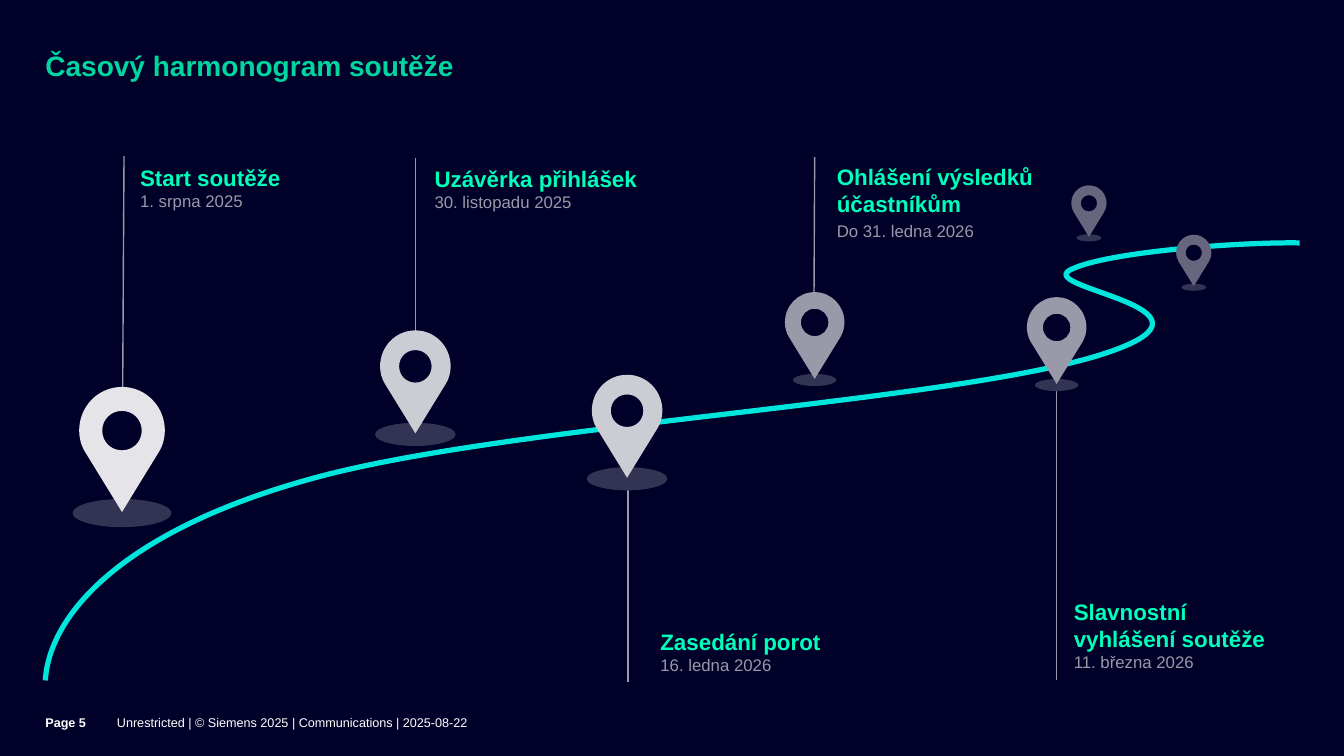
from dataclasses import dataclass

from lxml.etree import Element, SubElement
from pptx import Presentation
from pptx.dml.color import RGBColor
from pptx.enum.shapes import MSO_CONNECTOR, MSO_SHAPE
from pptx.enum.text import MSO_ANCHOR, MSO_AUTO_SIZE
from pptx.oxml.ns import qn
from pptx.util import Emu, Pt

SCALE = 9144
Point = tuple[float, float]
Box = tuple[int, int, int, int]


@dataclass(frozen=True)
class Theme:
    font: str = "Arial"
    back: str = "000028"
    title: str = "00D7A0"
    head: str = "00FFB9"
    road: str = "00E6DC"
    grey: str = "9999A9"
    shade: str = "333353"
    white: str = "FFFFFF"
    big: float = 20
    mid: float = 16
    small: float = 12
    foot: float = 9
    thick: float = 3.75
    thin: float = 1


@dataclass(frozen=True)
class Pin:
    x: int
    tip: int
    width: int
    color: str
    shade: tuple[int, int]


@dataclass(frozen=True)
class Event:
    name: str
    date: str
    box: Box
    line: Box
    low: bool = False
    gap: int = 0


@dataclass(frozen=True)
class Run:
    text: str
    size: float
    color: str
    bold: bool = False
    gap: float = 0
    lead: float = 1


THEME = Theme()

EVENTS = [
    Event("Start soutěže", "1. srpna 2025", (123, 155, 295, 63), (123, 155, 121, 508)),
    Event("Uzávěrka přihlášek", "30. listopadu 2025", (415, 156, 256, 63),
          (412, 157, 412, 411)),
    Event("Ohlášení výsledků účastníkům", "Do 31. ledna 2026", (814, 154, 260, 94),
          (808, 156, 807, 374), gap=3),
    Event("Zasedání porot", "16. ledna 2026", (639, 615, 256, 63),
          (623, 456, 623, 677), low=True),
    Event("Slavnostní vyhlášení soutěže", "11. března 2026", (1049, 585, 240, 90),
          (1048, 381, 1048, 675), low=True),
]

PINS = [
    Pin(121, 508, 85, "E5E5E9", (98, 28)),
    Pin(412, 430, 70, "CCCCD4", (80, 23)),
    Pin(622, 474, 70, "CCCCD4", (80, 23)),
    Pin(808, 376, 59, "9999A9", (43, 12)),
    Pin(1048, 381, 59, "9999A9", (43, 12)),
    Pin(1080, 235, 35, "66667E", (25, 7)),
    Pin(1184, 284, 35, "66667E", (25, 7)),
]

ROAD = [
    (45, 675), (49, 608), (125, 524), (316, 473), (507, 422), (927, 400), (1085, 354),
    (1242, 307), (1027, 287), (1061, 268), (1095, 250), (1228, 240), (1289, 241),
]

SIDE = [
    (0, 0), (0, 0), (0.43, -0.7), (0.43, -0.7), (0.48, -0.78), (0.5, -0.87),
    (0.5, -0.95), (0.5, -1.23), (0.28, -1.46), (0, -1.46),
]

ARC = [(0, -0.72), (0.13, -0.72), (0.23, -0.82), (0.23, -0.95),
       (0.23, -1.08), (0.13, -1.18), (0, -1.18)]


def px(value: float) -> Emu:
    return Emu(round(value * SCALE))


def rgb(code: str) -> RGBColor:
    return RGBColor.from_string(code)


def mirror(half: list[Point]) -> list[Point]:
    return half + [(-x, y) for x, y in reversed(half[:-1])]


def curve(shapes, loops: list[list[Point]], close: bool):
    scaled = [[(px(x), px(y)) for x, y in loop] for loop in loops]
    builder = shapes.build_freeform(*scaled[0][0], scale=1.0)
    for i, loop in enumerate(scaled):
        if i:
            builder.move_to(*loop[0])
        builder.add_line_segments(loop[1:], close=close)
    shape = builder.convert_to_shape()
    shape.shadow.inherit = False
    parts = list(shape._element.iter(qn("a:lnTo")))
    for i in range(0, len(parts), 3):
        bend = Element(qn("a:cubicBezTo"))
        parts[i].addprevious(bend)
        for part in parts[i:i + 3]:
            bend.append(part[0])
            part.getparent().remove(part)
    return shape


def paint(shape, color: str) -> None:
    shape.shadow.inherit = False
    shape.fill.solid()
    shape.fill.fore_color.rgb = rgb(color)
    shape.line.fill.background()


def oval(shapes, x: float, y: float, width: float, height: float, color: str) -> None:
    shape = shapes.add_shape(MSO_SHAPE.OVAL, px(x - width / 2), px(y - height / 2),
                             px(width), px(height))
    paint(shape, color)


def draw_road(shapes) -> None:
    road = curve(shapes, [ROAD], False)
    road.fill.background()
    road.line.color.rgb = rgb(THEME.road)
    road.line.width = Pt(THEME.thick)


def draw_line(shapes, ends: Box) -> None:
    line = shapes.add_connector(MSO_CONNECTOR.STRAIGHT, *map(px, ends))
    line.line.color.rgb = rgb(THEME.grey)
    line.line.width = Pt(THEME.thin)
    SubElement(line._element.spPr, qn("a:effectLst"))


def draw_pin(shapes, pin: Pin) -> None:
    group = shapes.add_group_shape().shapes
    size = pin.width
    oval(group, pin.x, pin.tip + 1, *pin.shade, THEME.shade)
    oval(group, pin.x, pin.tip - 0.96 * size, 0.63 * size, 0.63 * size, THEME.back)
    loops = [[(pin.x + size * x, pin.tip + size * y) for x, y in mirror(half)]
             for half in (SIDE, ARC)]
    paint(curve(group, loops, True), pin.color)


def write(shapes, runs: list[Run], box: Box, *, inset: Box = (0, 0, 0, 0),
          anchor: MSO_ANCHOR = MSO_ANCHOR.TOP, grow: bool = False) -> None:
    frame = shapes.add_textbox(*map(px, box)).text_frame
    frame.word_wrap = True
    frame.auto_size = MSO_AUTO_SIZE.SHAPE_TO_FIT_TEXT if grow else MSO_AUTO_SIZE.NONE
    frame.vertical_anchor = anchor
    (frame.margin_left, frame.margin_top,
     frame.margin_right, frame.margin_bottom) = map(px, inset)
    for i, item in enumerate(runs):
        para = frame.add_paragraph() if i else frame.paragraphs[0]
        para.line_spacing = item.lead
        if item.gap:
            para.space_before = Pt(item.gap)
        run = para.add_run()
        run.text = item.text
        run.font.name = THEME.font
        run.font.size = Pt(item.size)
        run.font.bold = item.bold
        run.font.color.rgb = rgb(item.color)


def main() -> None:
    deck = Presentation()
    deck.slide_width, deck.slide_height = px(1333), px(750)
    slide = deck.slides.add_slide(deck.slide_layouts[6])
    slide.background.fill.solid()
    slide.background.fill.fore_color.rgb = rgb(THEME.back)
    shapes = slide.shapes
    draw_road(shapes)
    write(shapes, [Run("Časový harmonogram soutěže", THEME.big, THEME.title, True, lead=0.9)],
          (45, 52, 1079, 63), inset=(0, 0, 35, 2))
    for event in EVENTS:
        draw_line(shapes, event.line)
        write(shapes, [Run(event.name, THEME.mid, THEME.head, True),
                       Run(event.date, THEME.small, THEME.grey, gap=event.gap)],
              event.box, inset=(16, 8, 16, 8), grow=True,
              anchor=MSO_ANCHOR.BOTTOM if event.low else MSO_ANCHOR.TOP)
    for pin in PINS:
        draw_pin(shapes, pin)
    notice = "Unrestricted | © Siemens 2025 | Communications | 2025-08-22"
    for text, left, width, bold in (("Page 5", 45, 71, True), (notice, 116, 1008, False)):
        write(shapes, [Run(text, THEME.foot, THEME.white, bold)], (left, 690, width, 60),
              inset=(0, 0, 0, 7), anchor=MSO_ANCHOR.MIDDLE)
    deck.save("out.pptx")


if __name__ == "__main__":
    main()
